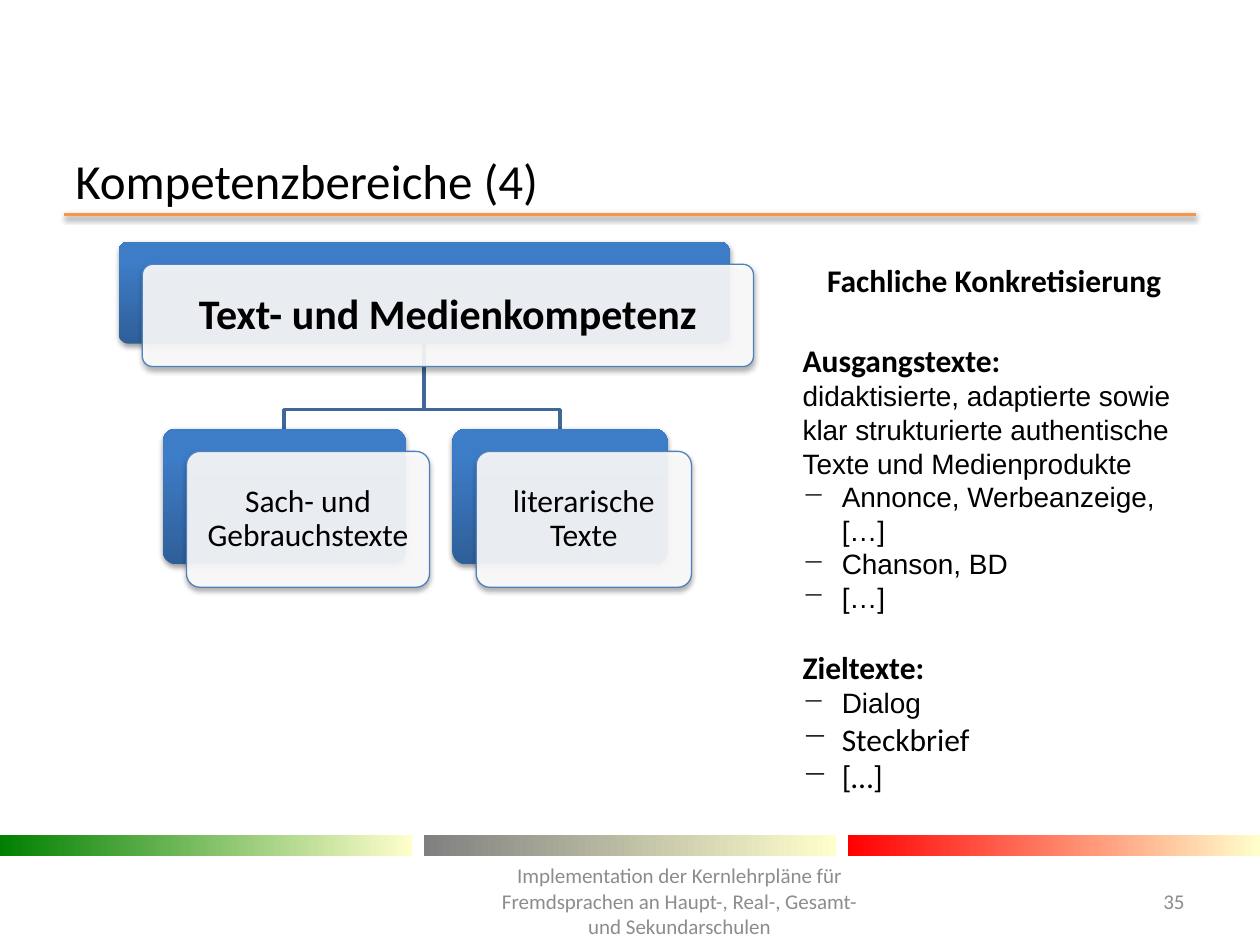
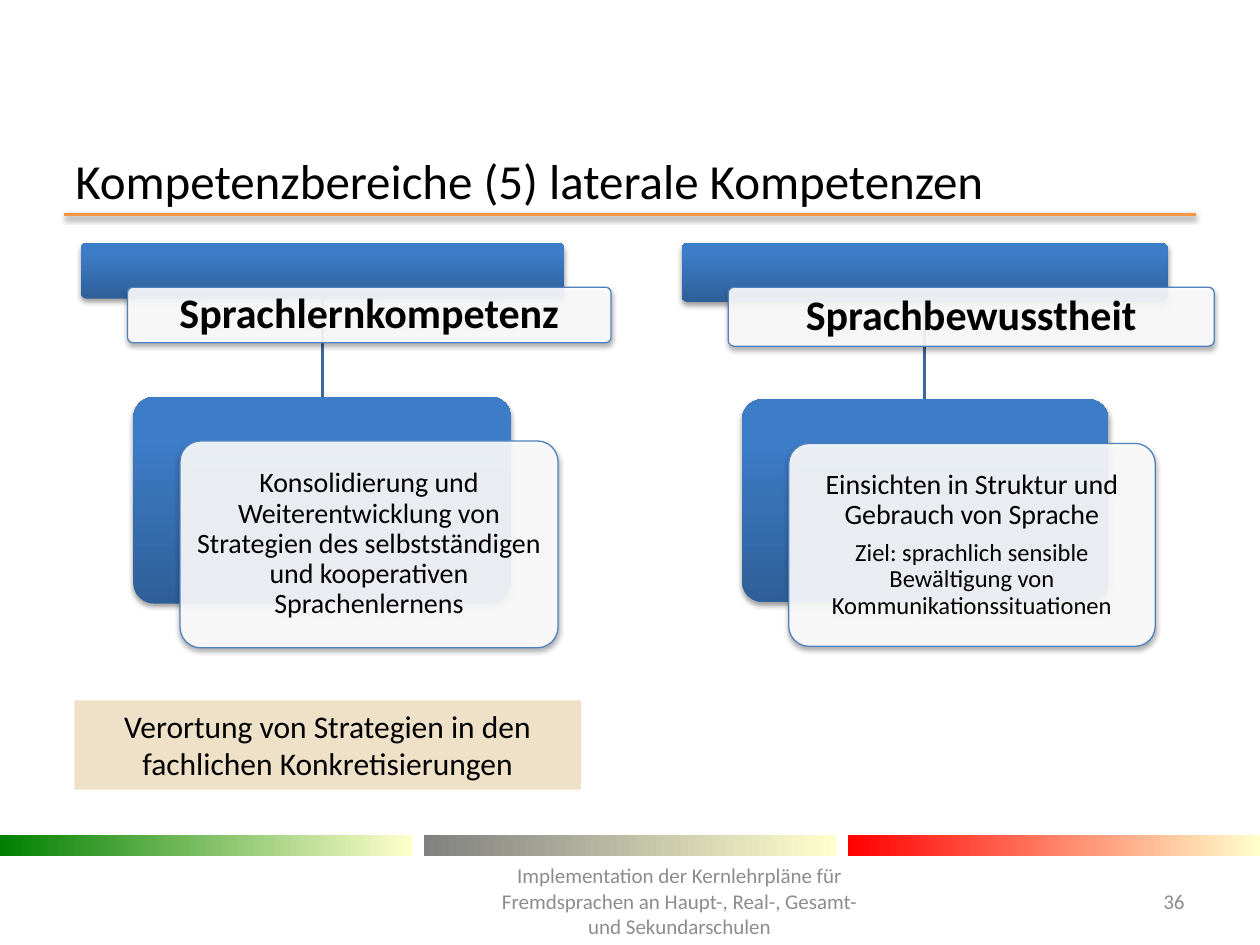
from pptx import Presentation
from pptx.dml.color import RGBColor
from pptx.enum.shapes import MSO_CONNECTOR, MSO_SHAPE
from pptx.enum.text import MSO_ANCHOR, PP_ALIGN
from pptx.oxml import parse_xml
from pptx.oxml.ns import nsdecls
from pptx.util import Cm, Pt

RECTANGLE = MSO_SHAPE.RECTANGLE
ROUNDED = MSO_SHAPE.ROUNDED_RECTANGLE
STRAIGHT = MSO_CONNECTOR.STRAIGHT
TOP, MIDDLE = MSO_ANCHOR.TOP, MSO_ANCHOR.MIDDLE
LEFT, CENTER, RIGHT = PP_ALIGN.LEFT, PP_ALIGN.CENTER, PP_ALIGN.RIGHT

COLOURS = {
    "text": "000000",
    "footer": "8C8C8C",
    "rule": "F79646",
    "green": "008000",
    "grey": "808080",
    "red": "FF0000",
    "cream": "FFFFCC",
    "card_dark": "2F5F99",
    "card_light": "3D7CC7",
    "card_front": "FFFFFF",
    "card_edge": "4F81BD",
    "link": "3F6797",
    "note": "EFE0C8",
}
COLOURS = {name: RGBColor.from_string(value) for name, value in COLOURS.items()}

FONTS = {
    "title": {"size": Pt(28), "name": "Calibri"},
    "footer": {"size": Pt(12), "name": "Calibri"},
    "card_head": {"size": Pt(24), "name": "Calibri", "bold": True},
    "strong": {"size": Pt(18), "name": "Calibri", "bold": True},
    "large": {"size": Pt(18), "name": "Calibri"},
    "medium": {"size": Pt(16), "name": "Calibri"},
    "small": {"size": Pt(14), "name": "Calibri"},
    "plain": {"size": Pt(16), "name": "Arial"},
}
LAYOUTS = {
    "left": {"alignment": LEFT},
    "center": {"alignment": CENTER},
    "right": {"alignment": RIGHT},
    "card": {"alignment": CENTER, "line_spacing": 0.9},
    "card_next": {"alignment": CENTER, "line_spacing": 0.9, "space_before": Pt(5.6)},
    "sources": {"alignment": LEFT, "space_before": Pt(24.4)},
    "targets": {"alignment": LEFT, "space_before": Pt(19.5)},
    "bullet": {"alignment": LEFT},
}


def write_text(box, paragraphs, anchor=MIDDLE, inset=None, colour="text"):
    frame = box.text_frame
    frame.word_wrap = True
    frame.vertical_anchor = anchor
    if inset is not None:
        for side in ("left", "right", "top", "bottom"):
            setattr(frame, f"margin_{side}", inset)
    for index, (text, font, layout) in enumerate(paragraphs):
        para = frame.add_paragraph() if index else frame.paragraphs[0]
        for name, value in LAYOUTS[layout].items():
            setattr(para, name, value)
        if layout == "bullet":
            properties = para._p.get_or_add_pPr()
            properties.set("marL", str(Cm(0.79)))
            properties.set("indent", str(-Cm(0.79)))
            properties.append(parse_xml(f'<a:buChar {nsdecls("a")} char="−"/>'))
        span = para.add_run()
        span.text = text
        for name, value in FONTS[font].items():
            setattr(span.font, name, value)
        span.font.color.rgb = COLOURS[colour]


def set_shadow(item, opacity=0, distance=1.6):
    shadow = (
        f'<a:outerShdw blurRad="{Pt(3.1)}" dist="{Pt(distance)}" dir="5400000" '
        f'rotWithShape="0"><a:srgbClr val="000000"><a:alpha val="{opacity * 1000}"/>'
        "</a:srgbClr></a:outerShdw>"
    ) if opacity else ""
    item._element.spPr.append(
        parse_xml(f'<a:effectLst {nsdecls("a")}>{shadow}</a:effectLst>'))


deck = Presentation()
deck.slide_width, deck.slide_height = Cm(25.4), Cm(19.05)

FOOTER = ("Implementation der Kernlehrpläne für Fremdsprachen an Haupt-, Real-, "
          "Gesamt- und Sekundarschulen")
BAND_WIDTH = 8.31
BAND_STEP = (25.4 - BAND_WIDTH) / 2

pages = []
for title, number in [
    ("Kompetenzbereiche (4)", "35"),
    ("Kompetenzbereiche (5) laterale Kompetenzen", "36"),
]:
    page = deck.slides.add_slide(deck.slide_layouts[6])
    pages.append(page)

    rule = page.shapes.add_connector(STRAIGHT, Cm(1.3), Cm(4.32), Cm(24.1), Cm(4.32))
    rule.line.color.rgb = COLOURS["rule"]
    rule.line.width = Pt(2)
    set_shadow(rule, 38)

    for index, colour in enumerate(("green", "grey", "red")):
        band = page.shapes.add_shape(
            RECTANGLE, Cm(index * BAND_STEP), Cm(16.84), Cm(BAND_WIDTH), Cm(0.41))
        band.fill.gradient()
        band.fill.gradient_angle = 0
        for stop, name in zip(band.fill.gradient_stops, (colour, "cream")):
            stop.color.rgb = COLOURS[name]
        band.line.fill.background()
        band.shadow.inherit = False

    for area, text, font, layout, colour in [
        ((1.27, 3.12, 22.86, 1), title, "title", "left", "text"),
        ((9.7, 17.65, 8, 1.02), FOOTER, "footer", "center", "footer"),
        ((22.5, 17.65, 1.63, 1.02), number, "footer", "right", "footer"),
    ]:
        box = page.shapes.add_textbox(*map(Cm, area))
        write_text(box, [(text, font, layout)], colour=colour)

media_page, lateral_page = pages

trees = [
    (media_page, (0.48, 0.46), [
        ((2.39, 4.87, 12.32, 2.06),
         [("Text- und Medienkompetenz", "card_head", "card")]),
        ((3.28, 8.64, 4.9, 2.74), [("Sach- und Gebrauchstexte", "large", "card")]),
        ((9.12, 8.64, 4.34, 2.74), [("literarische Texte", "large", "card")]),
    ]),
    (lateral_page, (0.94, 0.89), [
        ((1.63, 4.9, 9.75, 1.12), [("Sprachlernkompetenz", "card_head", "card")]),
        ((2.69, 8, 7.62, 4.17),
         [("Konsolidierung und Weiterentwicklung von Strategien des "
           "selbstständigen und kooperativen Sprachenlernens", "medium", "card")]),
    ]),
    (lateral_page, (0.94, 0.89), [
        ((13.74, 4.9, 9.8, 1.19), [("Sprachbewusstheit", "card_head", "card")]),
        ((14.96, 8.05, 7.39, 4.09),
         [("Einsichten in Struktur und Gebrauch von Sprache", "medium", "card"),
          ("Ziel: sprachlich sensible Bewältigung von Kommunikationssituationen",
           "small", "card_next")]),
    ]),
]

for page, (shift_x, shift_y), cards in trees:
    left, top, width, height = cards[0][0]
    start_x, start_y = left + width / 2, top + height
    for (left, top, width, height), _ in cards[1:]:
        end_x = left + width / 2
        if abs(end_x - start_x) < 0.1:
            link = page.shapes.add_connector(
                STRAIGHT, Cm(start_x), Cm(start_y), Cm(start_x), Cm(top))
        else:
            bend_y = top - 0.38
            outline = page.shapes.build_freeform(Cm(start_x), Cm(start_y))
            outline.add_line_segments(
                [(Cm(start_x), Cm(bend_y)), (Cm(end_x), Cm(bend_y)),
                 (Cm(end_x), Cm(top))], close=False)
            link = outline.convert_to_shape()
            link.fill.background()
        link.line.color.rgb = COLOURS["link"]
        link.line.width = Pt(2)
        set_shadow(link)

    for index, ((left, top, width, height), paragraphs) in enumerate(cards):
        back = page.shapes.add_shape(ROUNDED, Cm(left), Cm(top), Cm(width), Cm(height))
        back.fill.gradient()
        back.fill.gradient_angle = 90
        for stop, name, position in zip(
                back.fill.gradient_stops, ("card_dark", "card_light"), (0, 0.8)):
            stop.color.rgb = COLOURS[name]
            stop.position = position
        back.line.fill.background()
        set_shadow(back, 38)

        front = page.shapes.add_shape(
            ROUNDED, Cm(left + shift_x), Cm(top + shift_y), Cm(width), Cm(height))
        front.fill.solid()
        front.fill.fore_color.rgb = COLOURS["card_front"]
        front._element.spPr.find(".//{*}srgbClr").append(
            parse_xml(f'<a:alpha {nsdecls("a")} val="90000"/>'))
        front.line.color.rgb = COLOURS["card_edge"]
        front.line.width = Pt(0.75)
        set_shadow(front, 35, 1.8)
        write_text(front, paragraphs, inset=Cm(0.18 if index else 0.25))
        for card in (back, front):
            card.adjustments[0] = 0.1

details = media_page.shapes.add_textbox(Cm(15.93), Cm(5.13), Cm(8.23), Cm(11.79))
write_text(details, [
    ("Fachliche Konkretisierung", "strong", "center"),
    ("Ausgangstexte:", "strong", "sources"),
    ("didaktisierte, adaptierte sowie klar strukturierte authentische Texte und "
     "Medienprodukte", "plain", "left"),
    ("Annonce, Werbeanzeige, […]", "plain", "bullet"),
    ("Chanson, BD", "plain", "bullet"),
    ("[…]", "plain", "bullet"),
    ("Zieltexte:", "strong", "targets"),
    ("Dialog", "plain", "bullet"),
    ("Steckbrief", "large", "bullet"),
    ("[…]", "large", "bullet"),
], anchor=TOP)

note = lateral_page.shapes.add_shape(RECTANGLE, Cm(1.5), Cm(14.12), Cm(10.21), Cm(1.8))
note.fill.solid()
note.fill.fore_color.rgb = COLOURS["note"]
note.line.fill.background()
note.shadow.inherit = False
write_text(note, [("Verortung von Strategien in den fachlichen Konkretisierungen",
                   "large", "center")], anchor=TOP)

deck.save("out.pptx")
